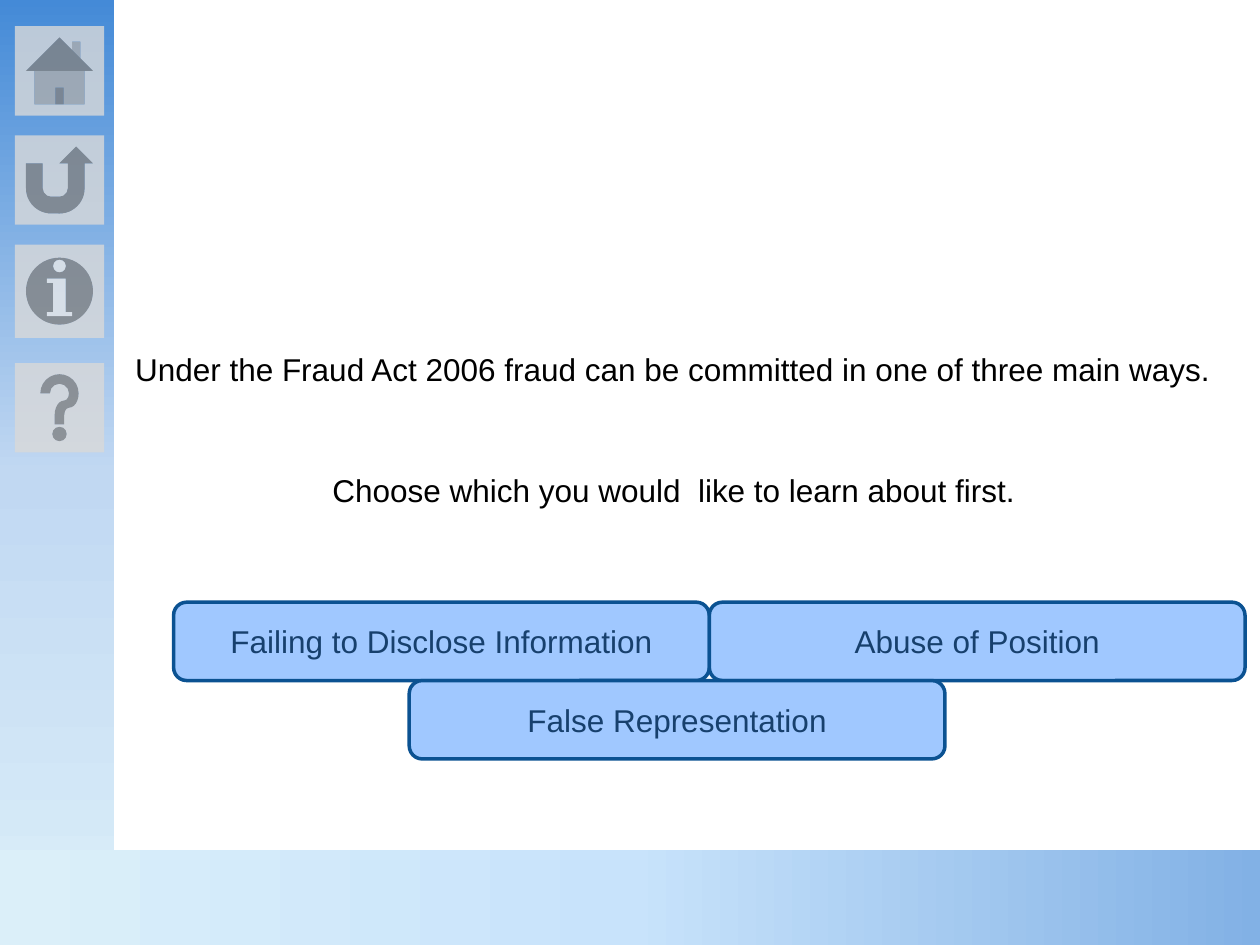
from copy import deepcopy

from pptx import Presentation
from pptx.dml.color import RGBColor
from pptx.enum.shapes import MSO_SHAPE as Shape
from pptx.enum.text import MSO_ANCHOR as Anchor, MSO_AUTO_SIZE as AutoSize, PP_ALIGN as Align
from pptx.oxml.ns import qn
from pptx.oxml.xmlchemy import OxmlElement
from pptx.util import Cm, Pt

BUTTON_WIDTH = 10.8
BUTTON_HEIGHT = 1.58


def color(value):
    return RGBColor.from_string(value)


def add_shape(slide, kind, left, top, width, height):
    shape = slide.shapes.add_shape(kind, Cm(left), Cm(top), Cm(width), Cm(height))
    shape.shadow.inherit = False
    shape.line.fill.background()
    return shape


def format_text(text_frame, text, text_color, align):
    text_frame.text = text
    paragraph = text_frame.paragraphs[0]
    paragraph.alignment = align
    font = paragraph.runs[0].font
    font.name = "Arial"
    font.size = Pt(18)
    font.color.rgb = color(text_color)


def add_gradient_band(slide, left, top, width, height, colors, angle):
    fill = add_shape(slide, Shape.RECTANGLE, left, top, width, height).fill
    fill.gradient()
    fill.gradient_angle = angle
    stops = fill.gradient_stops
    first_stop = slide.shapes[-1].element.spPr.find(".//" + qn("a:gs"))
    first_stop.addnext(deepcopy(first_stop))
    for index, (stop, value) in enumerate(zip(stops, colors)):
        stop.position = index / (len(colors) - 1)
        stop.color.rgb = color(value)


def add_navigation_button(slide, kind, top, height):
    shape = add_shape(slide, kind, 0.3, top, 1.8, height)
    shape.fill.solid()
    shape.fill.fore_color.rgb = color("D9D9D9")
    alpha = OxmlElement("a:alpha")
    alpha.set("val", "80000")
    shape.element.spPr.find(".//" + qn("a:srgbClr")).append(alpha)


def add_text(slide, text, left, top, width, align, wrap):
    text_frame = slide.shapes.add_textbox(Cm(left), Cm(top), Cm(width), Cm(1.03)).text_frame
    text_frame.word_wrap = wrap
    text_frame.auto_size = AutoSize.SHAPE_TO_FIT_TEXT
    format_text(text_frame, text, "000000", align)


def add_choice(slide, text, left, top):
    shape = add_shape(slide, Shape.ROUNDED_RECTANGLE, left, top, BUTTON_WIDTH, BUTTON_HEIGHT)
    shape.fill.solid()
    shape.fill.fore_color.rgb = color("A0C8FF")
    shape.line.color.rgb = color("0B5292")
    shape.line.width = Pt(2)
    shape.text_frame.vertical_anchor = Anchor.MIDDLE
    format_text(shape.text_frame, text, "17406D", Align.CENTER)


def main():
    presentation = Presentation()
    presentation.slide_width = Cm(25.4)
    presentation.slide_height = Cm(19.05)
    slide = presentation.slides.add_slide(presentation.slide_layouts[6])

    add_gradient_band(slide, 0, 0, 2.3, 19.05, ("448AD7", "C1D8F2", "DBEFF9"), 270)
    add_gradient_band(slide, 0, 17.13, 25.4, 2, ("82B1E5", "C8E3FB", "DBEFF9"), 180)

    for kind, top, height in (
        (Shape.ACTION_BUTTON_HOME, 0.53, 1.8),
        (Shape.ACTION_BUTTON_RETURN, 2.73, 1.8),
        (Shape.ACTION_BUTTON_INFORMATION, 4.93, 1.88),
        (Shape.ACTION_BUTTON_HELP, 7.32, 1.8),
    ):
        add_navigation_button(slide, kind, top, height)

    add_text(slide, "Under the Fraud Act 2006 fraud can be committed in one of three main ways.",
             2.41, 6.93, 22.3, Align.CENTER, True)
    add_text(slide, "Choose which you would  like to learn about first.",
             6.45, 9.37, 14.4, Align.LEFT, False)

    left, top = 3.5, 12.14
    add_choice(slide, "Failing to Disclose Information", left, top)
    add_choice(slide, "Abuse of Position", left + BUTTON_WIDTH, top)
    add_choice(slide, "False Representation", 8.25, top + BUTTON_HEIGHT)

    presentation.save("out.pptx")


if __name__ == "__main__":
    main()
